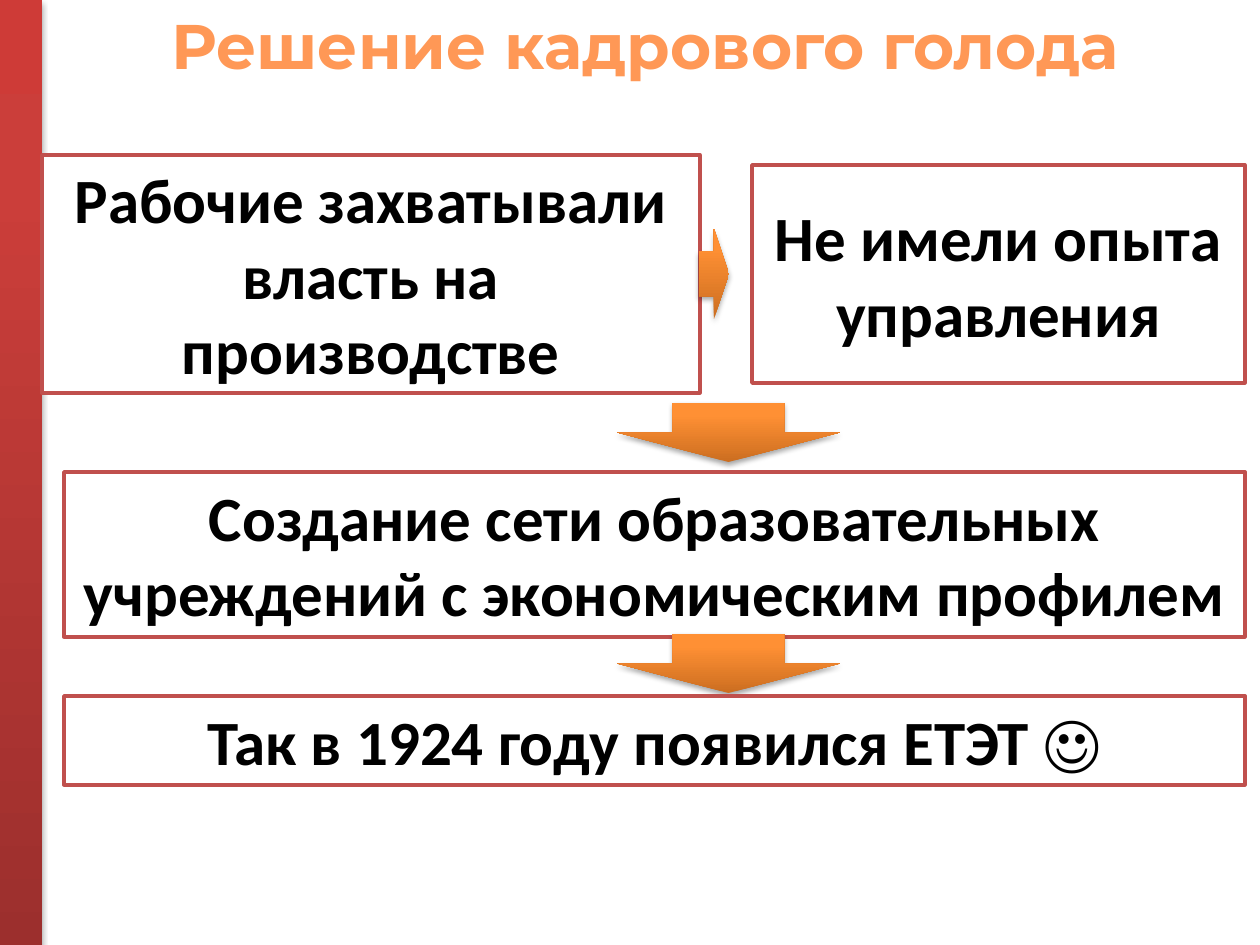
from copy import deepcopy

from lxml import etree
from pptx import Presentation
from pptx import util as u
from pptx.dml.color import RGBColor
from pptx.enum import shapes, text
from pptx.oxml import ns

SCALE = 914400 / 126  # EMU in one px
BLACK = RGBColor(0x00, 0x00, 0x00)
WHITE = RGBColor(0xFF, 0xFF, 0xFF)
PEACH = RGBColor(0xFF, 0x98, 0x56)
BRICK = RGBColor(0xC0, 0x50, 0x4D)
# Gradient colours from bottom to top
REDS = (RGBColor(0x9C, 0x2F, 0x2D), RGBColor(0xCB, 0x3E, 0x3A), RGBColor(0xCE, 0x3B, 0x37))
GOLDS = (RGBColor(0xCC, 0x6E, 0x20), RGBColor(0xFF, 0x90, 0x34), RGBColor(0xFF, 0x91, 0x36))
STOPS = (0, 0.8, 1)
KIND = shapes.MSO_SHAPE
ANCHOR = text.MSO_ANCHOR


def px(n):
    return u.Emu(round(n * SCALE))


class Deck:
    """Holds the text style and the current slide."""

    body = {"name": "Calibri", "size": u.Pt(36), "bold": True}
    head = {**body, "name": "Montserrat"}

    def __init__(self, file):
        self.slide = file.slides.add_slide(file.slide_layouts[5])

    def label(self, shape, words, style, color, anchor):
        frame = shape.text_frame
        form = {"word_wrap": True, "vertical_anchor": anchor,
                "auto_size": text.MSO_AUTO_SIZE.NONE}
        for key, value in form.items():
            setattr(frame, key, value)
        frame.text = words
        para = frame.paragraphs[0]
        para.alignment = text.PP_ALIGN.CENTER
        for key, value in style.items():
            setattr(para.runs[0].font, key, value)
        para.runs[0].font.color.rgb = color

    def title(self, words, *area):
        shape = self.slide.shapes.title
        for key, value in zip(("left", "top", "width", "height"), area):
            setattr(shape, key, px(value))
        self.label(shape, words, self.head, PEACH, ANCHOR.TOP)

    def shape(self, kind, area):
        shape = self.slide.shapes.add_shape(kind, *map(px, area))
        shape.shadow.inherit = False
        return shape

    def box(self, words, *area, anchor=ANCHOR.MIDDLE):
        shape = self.shape(KIND.RECTANGLE, area)
        shape.fill.solid()
        shape.fill.fore_color.rgb = WHITE
        shape.line.color.rgb = BRICK
        shape.line.width = u.Pt(2)
        self.label(shape, words, self.body, BLACK, anchor)

    def glossy(self, kind, colors, *area):
        shape = self.shape(kind, area)
        shape.line.fill.background()
        fill = shape.fill
        fill.gradient()
        fill.gradient_angle = 90
        # The default gradient has two stops: add a third
        stops = shape.element.spPr.find(".//" + ns.qn("a:gsLst"))
        stops.append(deepcopy(stops[-1]))
        for stop, color, place in zip(fill.gradient_stops, colors, STOPS):
            stop.color.rgb = color
            stop.position = place
        self.shade(shape)

    def shade(self, shape):
        effects = shape.element.spPr.find(ns.qn("a:effectLst"))
        outer = etree.SubElement(effects, ns.qn("a:outerShdw"), blurRad=str(u.Pt(3.1)),
                                 dist=str(u.Pt(1.8)), dir="5400000", rotWithShape="0")
        color = etree.SubElement(outer, ns.qn("a:srgbClr"), val=str(BLACK))
        etree.SubElement(color, ns.qn("a:alpha"), val="35000")


def main():
    file = Presentation()
    file.slide_width, file.slide_height = px(1260), px(945)
    deck = Deck(file)

    # Side bar and title
    deck.glossy(KIND.RECTANGLE, REDS, 0, 0, 42, 945)
    deck.title("Решение кадрового голода", 142, 0, 1006, 89)

    # Causes
    deck.box("Не имели опыта управления", 752, 165, 493, 218)
    deck.box("Рабочие захватывали власть на производстве", 42, 155, 658, 238)

    # Solution
    deck.box("Создание сети образовательных учреждений с экономическим профилем",
             64, 472, 1181, 165, anchor=ANCHOR.TOP)

    # Arrows
    deck.glossy(KIND.RIGHT_ARROW, GOLDS, 699, 229, 30, 90)
    for top in (403, 634):
        deck.glossy(KIND.DOWN_ARROW, GOLDS, 617, top, 223, 59)

    # Result
    deck.box("Так в 1924 году появился ЕТЭТ ☺", 64, 696, 1181, 89, anchor=ANCHOR.TOP)

    file.save("out.pptx")


if __name__ == "__main__":
    main()
